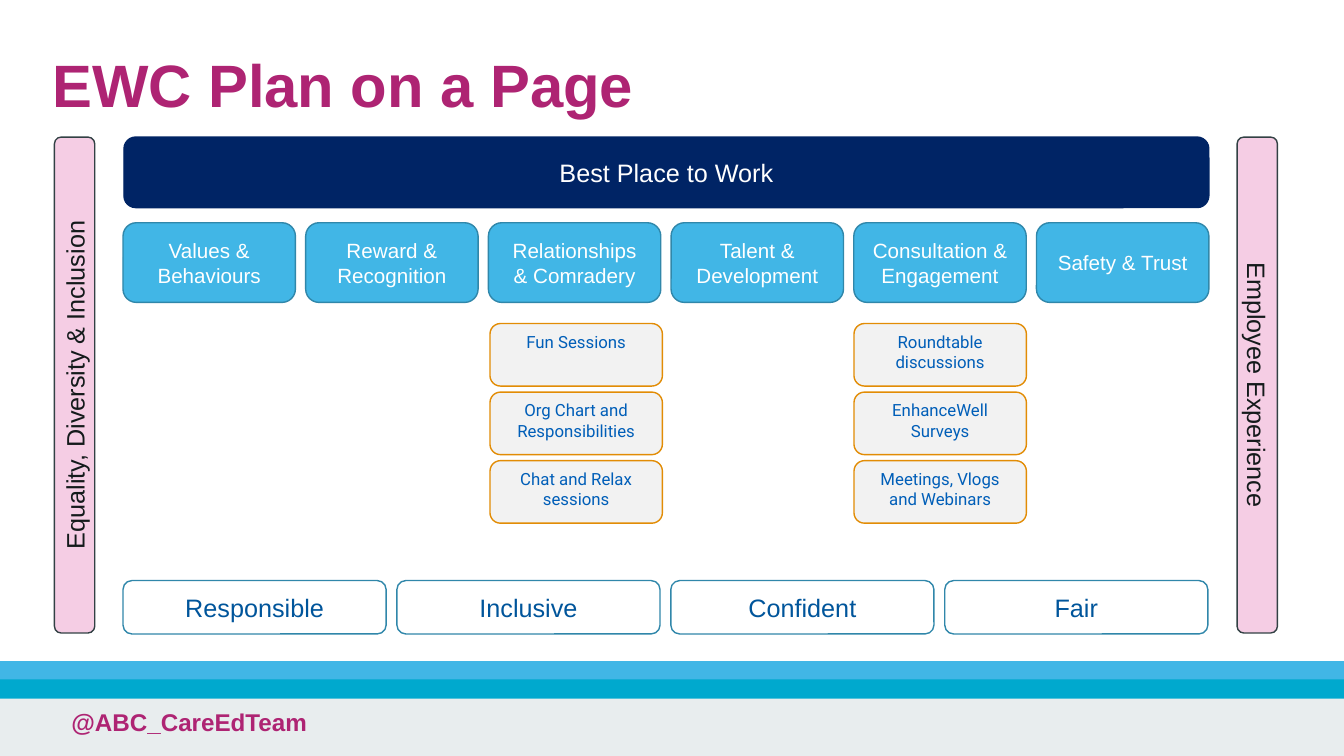
"""Build the EWC plan-on-a-page slide."""
from pptx import Presentation
from pptx.dml.color import RGBColor
from pptx.enum import shapes, text
from pptx.util import Inches, Pt


def style_text(frame, words, size, color, font="Arial", bold=False, align=text.PP_ALIGN.CENTER):
    frame.text = words
    frame.word_wrap = True
    para = frame.paragraphs[0]
    para.alignment = align
    para.font.size = Pt(size)
    para.font.name = font
    para.font.bold = bold
    para.font.color.rgb = RGBColor.from_string(color)


def add_box(left, top, width, height, fill, line=None):
    kind = shapes.MSO_SHAPE.ROUNDED_RECTANGLE if line else shapes.MSO_SHAPE.RECTANGLE
    box = page.shapes.add_shape(kind, Inches(left), Inches(top), Inches(width), Inches(height))
    box.shadow.inherit = False
    box.fill.solid()
    box.fill.fore_color.rgb = RGBColor.from_string(fill)
    if line:
        box.line.color.rgb = RGBColor.from_string(line)
        box.line.width = Pt(1)
    else:
        box.line.fill.background()
    box.text_frame.vertical_anchor = text.MSO_ANCHOR.MIDDLE
    return box


deck = Presentation()
deck.slide_width = Inches(13.33)
deck.slide_height = Inches(7.5)
page = deck.slides.add_slide(deck.slide_layouts[5])

for top, height, fill in [(6.93, 0.57, "E8EDEE"), (6.56, 0.19, "41B6E6"), (6.74, 0.19, "00A9CE")]:
    add_box(0, top, 13.33, height, fill)

handle = page.shapes.add_textbox(Inches(0.61), Inches(6.97), Inches(7.78), Inches(0.53))
style_text(handle.text_frame, "@ABC_CareEdTeam", 17.3, "AE2473", bold=True,
           align=text.PP_ALIGN.LEFT)

title = page.shapes.title
title.left, title.top = Inches(0.52), Inches(0.52)
title.width, title.height = Inches(11.5), Inches(0.7)
frame = title.text_frame
style_text(frame, "EWC Plan on a Page", 42.7, "AE2473", bold=True, align=text.PP_ALIGN.LEFT)
frame.auto_size = text.MSO_AUTO_SIZE.NONE
frame.vertical_anchor = text.MSO_ANCHOR.MIDDLE
frame.margin_left = frame.margin_right = frame.margin_top = frame.margin_bottom = 0
frame.paragraphs[0].line_spacing = 0.9

banner = add_box(1.23, 1.36, 10.76, 0.7, "002465", "002464")
style_text(banner.text_frame, "Best Place to Work", 18, "FFFFFF")

themes = ["Values & Behaviours", "Reward & Recognition", "Relationships & Comradery",
          "Talent & Development", "Consultation & Engagement", "Safety & Trust"]
theme_pitch = (10.28 - 1.22) / (len(themes) - 1)
for column, theme in enumerate(themes):
    box = add_box(1.22 + column * theme_pitch, 2.21, 1.71, 0.79, "41B6E6", "3087AA")
    style_text(box.text_frame, theme, 14.7, "FFFFFF")
    box.text_frame.margin_left = box.text_frame.margin_right = Inches(0.13)
    box.text_frame.margin_top = box.text_frame.margin_bottom = Inches(0.07)

activities = {
    4.86: ["Fun Sessions", "Org Chart and Responsibilities", "Chat and Relax sessions"],
    8.47: ["Roundtable discussions", "EnhanceWell Surveys", "Meetings, Vlogs and Webinars"],
}
for left, names in activities.items():
    for row, name in enumerate(names):
        box = add_box(left, 3.21 + row * 0.68, 1.71, 0.62, "F2F2F2", "E28C05")
        style_text(box.text_frame, name, 12, "005EB8", font="Roboto")
        box.text_frame.vertical_anchor = text.MSO_ANCHOR.TOP

values = ["Responsible", "Inclusive", "Confident", "Fair"]
value_pitch = (9.37 - 1.22) / (len(values) - 1)
for column, value in enumerate(values):
    box = add_box(1.22 + column * value_pitch, 5.76, 2.61, 0.53, "FFFFFF", "3087AA")
    style_text(box.text_frame, value, 18, "00559B")

for left, words, direction in [(0.54, "Equality, Diversity & Inclusion", "vert270"),
                               (12.27, "Employee Experience", "vert")]:
    pillar = add_box(left, 1.36, 0.4, 4.92, "F5CDE4", "324144")
    style_text(pillar.text_frame, words, 18, "141A1B")
    pillar.element.txBody.bodyPr.set("vert", direction)

deck.save("out.pptx")
